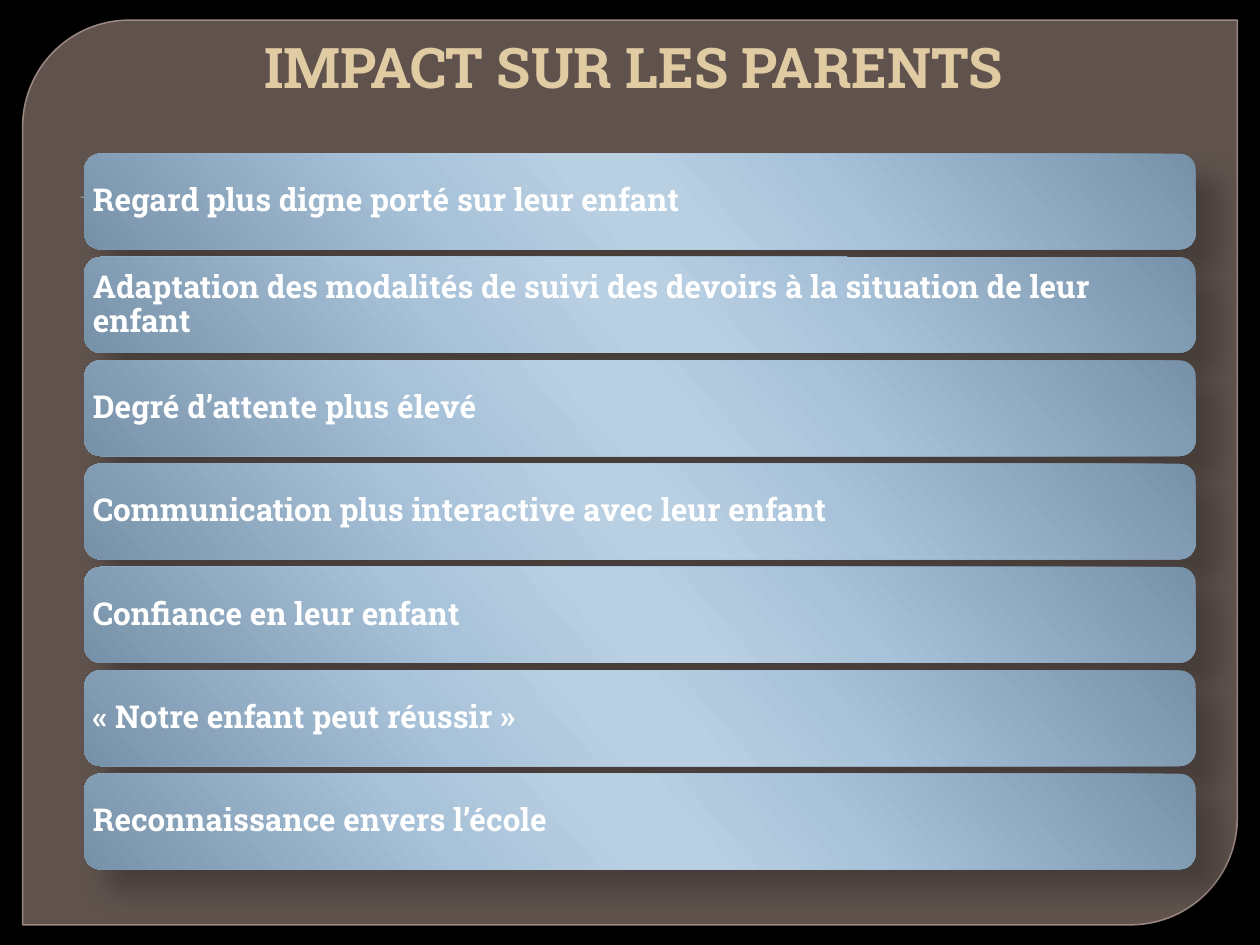
"""Build the slide on the impact on parents: a title above seven stacked bars."""
from lxml.etree import SubElement
from pptx import Presentation
from pptx.dml.color import RGBColor
from pptx.enum.shapes import MSO_SHAPE
from pptx.enum.text import MSO_ANCHOR, PP_ALIGN
from pptx.oxml import parse_xml
from pptx.oxml.ns import nsdecls, qn
from pptx.util import Inches, Pt

TITLE = "IMPACT SUR LES PARENTS"
IMPACTS = [
    "Regard plus digne porté sur leur enfant",
    "Adaptation des modalités de suivi des devoirs à la situation de leur enfant",
    "Degré d’attente plus élevé",
    "Communication plus interactive avec leur enfant",
    "Confiance en leur enfant",
    "« Notre enfant peut réussir »",
    "Reconnaissance envers l’école",
]
FONT = "Roboto Slab"
BLACK = RGBColor(0x00, 0x00, 0x00)
WHITE = RGBColor(0xFF, 0xFF, 0xFF)
PANEL = RGBColor(0x94, 0x80, 0x79)
PANEL_EDGE = RGBColor(0xA9, 0x94, 0x8D)
RULE = RGBColor(0x94, 0xB6, 0xD2)
SAND = RGBColor(0xE0, 0xCB, 0xA3)
STEEL = RGBColor(0x77, 0x92, 0xA8)
SKY = RGBColor(0xA8, 0xC2, 0xD9)
PALE = RGBColor(0xB9, 0xCF, 0xE2)
BAR_STOPS = [(0, STEEL), (33, SKY), (47, PALE), (53, PALE), (68, SKY), (100, STEEL)]

BAR_LEFT, BAR_TOP, BAR_WIDTH, BAR_HEIGHT = 0.67, 1.22, 8.82, 0.76
BAR_PITCH = 0.82
BAR_MARGIN = 0.03


def add_box(slide, kind, left, top, width, height):
    shape = slide.shapes.add_shape(
        kind, Inches(left), Inches(top), Inches(width), Inches(height))
    shape.shadow.inherit = False
    shape.line.fill.background()
    return shape


def set_opacity(fill, percent):
    color = fill._xPr.find(qn("a:solidFill"))[0]
    SubElement(color, qn("a:alpha"), val=str(percent * 1000))


def add_shadow(shape, opacity, blur, distance, angle):
    effects = shape._element.spPr.find(qn("a:effectLst"))
    shadow = SubElement(
        effects, qn("a:outerShdw"), blurRad=str(Pt(blur)), dist=str(Pt(distance)),
        dir=str(angle * 60000), algn="tl", rotWithShape="0")
    color = SubElement(shadow, qn("a:srgbClr"), val=str(BLACK))
    SubElement(color, qn("a:alpha"), val=str(opacity * 1000))


def fill_gradient(shape, stops, angle):
    stop_xml = "".join(
        f'<a:gs pos="{position * 1000}"><a:srgbClr val="{color}"/></a:gs>'
        for position, color in stops)
    gradient = parse_xml(
        f'<a:gradFill {nsdecls("a")} rotWithShape="1"><a:gsLst>{stop_xml}</a:gsLst>'
        f'<a:lin ang="{angle * 60000}" scaled="1"/></a:gradFill>')
    shape._element.spPr.find(qn("a:prstGeom")).addnext(gradient)


def write(shape, text, size, color, alignment, anchor):
    frame = shape.text_frame
    frame.word_wrap = True
    frame.vertical_anchor = anchor
    paragraph = frame.paragraphs[0]
    paragraph.text = text
    paragraph.alignment = alignment
    font = paragraph.font
    font.name, font.size, font.bold = FONT, Pt(size), True
    font.color.rgb = color
    return paragraph


def add_panel(slide):
    panel = add_box(slide, MSO_SHAPE.ROUND_2_DIAG_RECTANGLE, 0.18, 0.16, 9.64, 7.18)
    panel.adjustments[0], panel.adjustments[1] = 0.118, 0
    panel.fill.solid()
    panel.fill.fore_color.rgb = PANEL
    set_opacity(panel.fill, 65)
    panel.line.color.rgb = PANEL_EDGE
    panel.line.width = Pt(0.87)
    set_opacity(panel.line.fill, 88)


def add_rule(slide):
    rule = add_box(slide, MSO_SHAPE.RECTANGLE, 0.64, 1.56, 8.75, 0.01)
    rule.fill.solid()
    rule.fill.fore_color.rgb = RULE
    add_shadow(rule, 75, 1, 1, 90)


def add_title(slide):
    title = slide.shapes.add_textbox(Inches(0.5), Inches(0.28), Inches(9), Inches(0.56))
    paragraph = write(title, TITLE, 32, SAND, PP_ALIGN.CENTER, MSO_ANCHOR.BOTTOM)
    paragraph._p.get_or_add_pPr().set("marL", str(Inches(0.06)))


def add_bar(slide, row, text):
    bar = add_box(slide, MSO_SHAPE.ROUNDED_RECTANGLE, BAR_LEFT,
                  BAR_TOP + row * BAR_PITCH, BAR_WIDTH, BAR_HEIGHT)
    fill_gradient(bar, BAR_STOPS, 139)
    add_shadow(bar, 26, 15, 18, 45)
    frame = bar.text_frame
    frame.margin_left = frame.margin_right = Inches(BAR_MARGIN)
    frame.margin_top = frame.margin_bottom = Inches(BAR_MARGIN)
    paragraph = write(bar, text, 18, WHITE, PP_ALIGN.LEFT, MSO_ANCHOR.MIDDLE)
    paragraph.line_spacing = 0.9


def main():
    presentation = Presentation()
    presentation.slide_width, presentation.slide_height = Inches(10), Inches(7.5)
    slide = presentation.slides.add_slide(presentation.slide_layouts[6])
    slide.background.fill.solid()
    slide.background.fill.fore_color.rgb = BLACK
    add_panel(slide)
    add_rule(slide)
    add_title(slide)
    for row, text in enumerate(IMPACTS):
        add_bar(slide, row, text)
    presentation.save("out.pptx")


if __name__ == "__main__":
    main()
